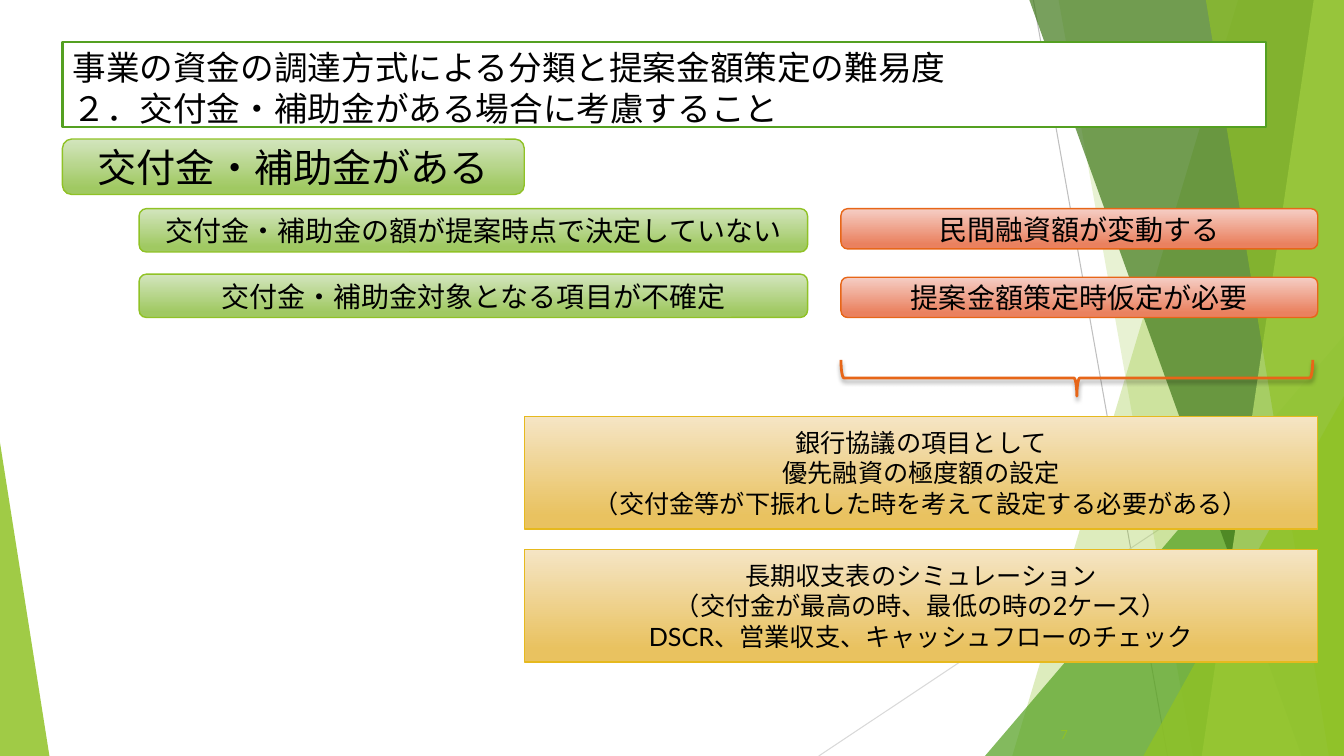
from dataclasses import dataclass

from lxml import etree
from pptx import Presentation
from pptx import util as u
from pptx.dml.color import RGBColor
from pptx.enum import shapes, text
from pptx.oxml import ns

BLACK = RGBColor(0x00, 0x00, 0x00)
WHITE = RGBColor(0xFF, 0xFF, 0xFF)
LEAF = RGBColor(0x90, 0xC2, 0x26)
GRASS = RGBColor(0x54, 0xA0, 0x21)
FOREST = RGBColor(0x3F, 0x78, 0x19)
LIME = RGBColor(0xC0, 0xE4, 0x74)
GREEN_TOP = RGBColor(0xD3, 0xE5, 0xBE)
GREEN_BASE = RGBColor(0xA0, 0xC9, 0x62)
ORANGE = RGBColor(0xE7, 0x66, 0x18)
ORANGE_TOP = RGBColor(0xF5, 0xCE, 0xC5)
ORANGE_BASE = RGBColor(0xEA, 0x81, 0x5F)
GOLD = RGBColor(0xE6, 0xB9, 0x1E)
GOLD_TOP = RGBColor(0xF5, 0xE5, 0xC5)
GOLD_BASE = RGBColor(0xE9, 0xC2, 0x60)
GREY = RGBColor(0xBF, 0xBF, 0xBF)
PALE_GREY = RGBColor(0xD9, 0xD9, 0xD9)
FONT = "Lato"
ROUNDED = shapes.MSO_SHAPE.ROUNDED_RECTANGLE
RECTANGLE = shapes.MSO_SHAPE.RECTANGLE
WIDTH, HEIGHT = u.Inches(13.33), u.Inches(7.5)


def across(percent: float) -> int:
    return round(WIDTH * percent / 100)


def down(percent: float) -> int:
    return round(HEIGHT * percent / 100)


@dataclass(frozen=True)
class Frame:
    left: float
    top: float
    width: float
    height: float

    def emu(self) -> tuple[int, int, int, int]:
        return across(self.left), down(self.top), across(self.width), down(self.height)


@dataclass(frozen=True)
class Ray:
    start: tuple[float, float]
    end: tuple[float, float]
    color: RGBColor


@dataclass(frozen=True)
class Band:
    top_edge: float
    base_edge: float
    color: RGBColor
    opacity: int


@dataclass(frozen=True)
class Wedge:
    frame: Frame
    apex: float
    color: RGBColor
    opacity: int


@dataclass(frozen=True)
class Style:
    outline: shapes.MSO_SHAPE
    top: RGBColor
    base: RGBColor
    border: RGBColor


@dataclass(frozen=True)
class Box:
    frame: Frame
    words: str
    size: int
    style: Style


GREEN = Style(ROUNDED, GREEN_TOP, GREEN_BASE, LEAF)
RED = Style(ROUNDED, ORANGE_TOP, ORANGE_BASE, ORANGE)
YELLOW = Style(RECTANGLE, GOLD_TOP, GOLD_BASE, GOLD)

RAYS = [
    Ray((76.89, 0), (86.87, 100), GREY),
    Ray((100, 53.73), (60.92, 100), PALE_GREY),
]
FACETS = [
    Band(92.12, 75.32, LEAF, 30),
    Band(78.77, 88.75, LEAF, 20),
    Wedge(Frame(73.29, 44.4, 26.71, 55.6), 1, GRASS, 72),
    Band(76.59, 96.85, FOREST, 70),
    Band(97.75, 89.42, LIME, 70),
    Band(89.72, 98.87, LEAF, 65),
    Wedge(Frame(85.07, 52.4, 14.93, 47.6), 1, LEAF, 80),
    Wedge(Frame(0, 58.53, 3.68, 41.47), 0, LEAF, 85),
]
TITLE = "事業の資金の調達方式による分類と提案金額策定の難易度\v２．交付金・補助金がある場合に考慮すること"
BOXES = [
    Box(Frame(4.65, 18.4, 34.36, 7.33), "交付金・補助金がある", 28, GREEN),
    Box(Frame(10.35, 27.6, 49.74, 5.73), "交付金・補助金の額が提案時点で決定していない", 20, GREEN),
    Box(Frame(62.57, 27.6, 35.48, 5.33), "民間融資額が変動する", 20, RED),
    Box(Frame(10.35, 36.27, 49.74, 5.73), "交付金・補助金対象となる項目が不確定", 20, GREEN),
    Box(Frame(62.57, 36.67, 35.48, 5.33), "提案金額策定時仮定が必要", 20, RED),
    Box(Frame(39.01, 55.07, 59.04, 14.93),
        "銀行協議の項目として\n優先融資の極度額の設定\n（交付金等が下振れした時を考えて設定する必要がある）", 18, YELLOW),
    Box(Frame(39.01, 72.67, 59.04, 14.93),
        "長期収支表のシミュレーション\n（交付金が最高の時、最低の時の2ケース）\n"
        "DSCR、営業収支、キャッシュフローのチェック", 18, YELLOW),
]


def write(frame, words: str, size: int, color: RGBColor, align, anchor) -> None:
    frame.text = words
    frame.word_wrap = True
    frame.auto_size = text.MSO_AUTO_SIZE.NONE
    frame.vertical_anchor = anchor
    for paragraph in frame.paragraphs:
        paragraph.alignment = align
        for run in paragraph.runs:
            run.font.name, run.font.size = FONT, u.Pt(size)
            run.font.color.rgb = color


def draw_ray(slide, ray: Ray) -> None:
    (x1, y1), (x2, y2) = ray.start, ray.end
    line = slide.shapes.add_connector(
        shapes.MSO_CONNECTOR.STRAIGHT, across(x1), down(y1), across(x2), down(y2))
    line.line.color.rgb, line.line.width = ray.color, u.Pt(0.75)
    etree.SubElement(line.element.spPr, ns.qn("a:effectLst"))


def draw_facet(slide, facet: Band | Wedge) -> None:
    if isinstance(facet, Band):
        builder = slide.shapes.build_freeform(across(facet.top_edge), 0)
        builder.add_line_segments(
            [(WIDTH, 0), (WIDTH, HEIGHT), (across(facet.base_edge), HEIGHT)])
        shape = builder.convert_to_shape()
    else:
        shape = slide.shapes.add_shape(
            shapes.MSO_SHAPE.ISOSCELES_TRIANGLE, *facet.frame.emu())
        shape.adjustments[0] = facet.apex
    shape.shadow.inherit = False
    shape.line.fill.background()
    shape.fill.solid()
    shape.fill.fore_color.rgb = facet.color
    tint = shape.element.spPr.find(".//" + ns.qn("a:srgbClr"))
    etree.SubElement(tint, ns.qn("a:alpha"), val=str(facet.opacity * 1000))


def draw_title(slide) -> None:
    title = slide.shapes.title
    slide.shapes.element.append(title.element)
    title.left, title.top, title.width, title.height = Frame(4.65, 5.6, 89.57, 11.2).emu()
    title.fill.solid()
    title.fill.fore_color.rgb = WHITE
    title.line.color.rgb, title.line.width = GRASS, u.Pt(1.5)
    write(title.text_frame, TITLE, 24, BLACK, text.PP_ALIGN.LEFT, text.MSO_ANCHOR.TOP)


def draw_box(slide, box: Box) -> None:
    shape = slide.shapes.add_shape(box.style.outline, *box.frame.emu())
    shape.shadow.inherit = False
    shape.fill.gradient()
    shape.fill.gradient_angle = 270
    first, last = shape.fill.gradient_stops
    first.color.rgb, first.position = box.style.top, 0
    last.color.rgb, last.position = box.style.base, 0.88
    shape.line.color.rgb, shape.line.width = box.style.border, u.Pt(1)
    write(shape.text_frame, box.words, box.size, BLACK,
          text.PP_ALIGN.CENTER, text.MSO_ANCHOR.MIDDLE)


def draw_brace(slide) -> None:
    brace = slide.shapes.add_shape(
        shapes.MSO_SHAPE.RIGHT_BRACE, *Frame(78.77, 18.8, 2.7, 62.4).emu())
    brace.rotation = 90
    brace.fill.background()
    brace.line.color.rgb, brace.line.width = ORANGE, u.Pt(2)
    brace.shadow.inherit = False
    effects = brace.element.spPr.find(ns.qn("a:effectLst"))
    shadow = etree.SubElement(effects, ns.qn("a:outerShdw"), blurRad=str(u.Pt(3)),
                              dist=str(u.Pt(2)), dir="5400000", rotWithShape="0")
    tint = etree.SubElement(shadow, ns.qn("a:srgbClr"), val=str(BLACK))
    etree.SubElement(tint, ns.qn("a:alpha"), val="35000")


def draw_page_number(slide) -> None:
    number = slide.shapes.add_textbox(*Frame(75, 94.6, 5.2, 5).emu())
    write(number.text_frame, "7", 9, LEAF, text.PP_ALIGN.RIGHT, text.MSO_ANCHOR.MIDDLE)


def main() -> None:
    deck = Presentation()
    deck.slide_width, deck.slide_height = WIDTH, HEIGHT
    slide = deck.slides.add_slide(deck.slide_layouts[5])
    for ray in RAYS:
        draw_ray(slide, ray)
    for facet in FACETS:
        draw_facet(slide, facet)
    draw_page_number(slide)
    draw_title(slide)
    for box in BOXES:
        draw_box(slide, box)
    draw_brace(slide)
    deck.save("out.pptx")


if __name__ == "__main__":
    main()
